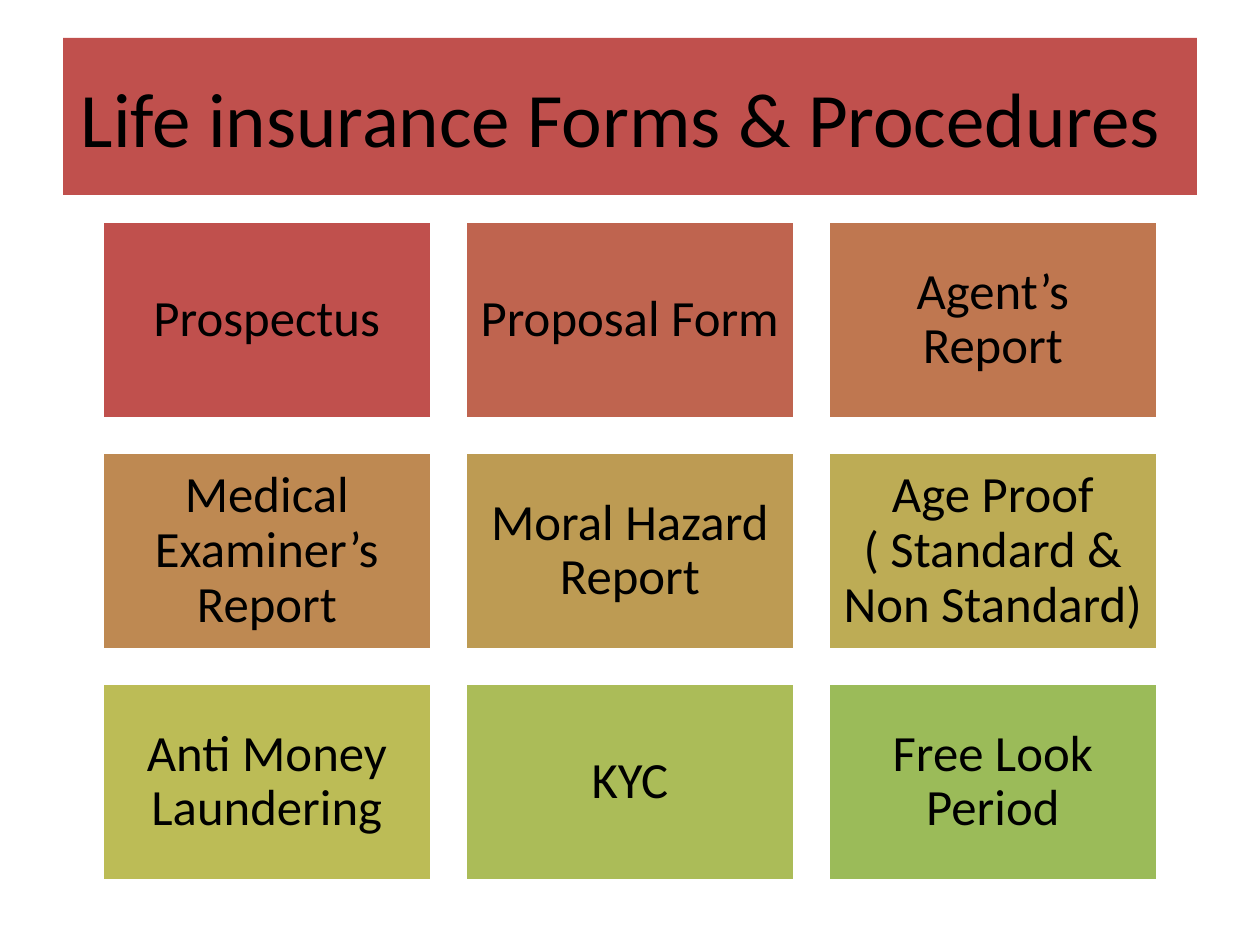
from dataclasses import dataclass

from pptx import Presentation
from pptx.dml.color import RGBColor
from pptx.enum.shapes import MSO_SHAPE
from pptx.enum.text import MSO_ANCHOR, PP_ALIGN
from pptx.util import Emu, Inches, Pt

RECT = MSO_SHAPE.RECTANGLE
MIDDLE = MSO_ANCHOR.MIDDLE
CENTER = PP_ALIGN.CENTER

BLACK = RGBColor(0x00, 0x00, 0x00)
WHITE = RGBColor(0xFF, 0xFF, 0xFF)
RED = RGBColor(0xC0, 0x50, 0x4D)
BRICK = RGBColor(0xBF, 0x64, 0x4F)
RUST = RGBColor(0xBF, 0x77, 0x50)
TAN = RGBColor(0xBE, 0x89, 0x52)
OCHRE = RGBColor(0xBD, 0x9B, 0x53)
SAND = RGBColor(0xBD, 0xAC, 0x55)
OLIVE = RGBColor(0xBC, 0xBC, 0x56)
LIME = RGBColor(0xAB, 0xBC, 0x58)
GREEN = RGBColor(0x9B, 0xBB, 0x59)

FONT = "Calibri"
COLS = 3
LEFT, TOP = 102, 221
WIDE, HIGH = 330, 198
STEP_X, STEP_Y = 363, 231
INSET = 15


@dataclass
class Tile:
    text: str
    fill: RGBColor


TILES = [
    Tile("Prospectus", RED),
    Tile("Proposal Form ", BRICK),
    Tile("Agent’s Report", RUST),
    Tile("Medical Examiner’s Report", TAN),
    Tile("Moral Hazard Report", OCHRE),
    Tile("Age Proof ( Standard & Non Standard)", SAND),
    Tile("Anti Money Laundering", OLIVE),
    Tile("KYC", LIME),
    Tile("Free Look Period", GREEN),
]


def px(count: int) -> Emu:
    """Turn px, at 126 to the inch, into EMU."""
    return Emu(round(count * 914400 / 126))


def paint(shape, fill: RGBColor) -> None:
    shape.fill.solid()
    shape.fill.fore_color.rgb = fill


def write(shape, text: str, *, size: int, lines: float = 1.0) -> None:
    frame = shape.text_frame
    frame.word_wrap = True
    frame.vertical_anchor = MIDDLE
    para = frame.paragraphs[0]
    para.alignment = CENTER
    para.line_spacing = lines
    run = para.add_run()
    run.text = text
    run.font.name = FONT
    run.font.size = Pt(size)
    run.font.color.rgb = BLACK


def draw_title(slide, text: str) -> None:
    title = slide.shapes.title
    title.left, title.top = px(63), px(38)
    title.width, title.height = px(1134), px(157)
    paint(title, RED)
    write(title, text, size=44)


def draw_tile(slide, tile: Tile, row: int, col: int) -> None:
    shape = slide.shapes.add_shape(
        RECT, px(LEFT + col * STEP_X), px(TOP + row * STEP_Y), px(WIDE), px(HIGH)
    )
    shape.shadow.inherit = False
    paint(shape, tile.fill)
    shape.line.color.rgb = WHITE
    shape.line.width = Pt(2)
    frame = shape.text_frame
    frame.margin_left = frame.margin_right = px(INSET)
    frame.margin_top = frame.margin_bottom = px(INSET)
    write(shape, tile.text, size=29, lines=0.9)


def main() -> None:
    deck = Presentation()
    deck.slide_width, deck.slide_height = Inches(10), Inches(7.5)
    slide = deck.slides.add_slide(deck.slide_layouts[5])
    draw_title(slide, "Life insurance Forms & Procedures ")
    for index, tile in enumerate(TILES):
        draw_tile(slide, tile, *divmod(index, COLS))
    deck.save("out.pptx")


if __name__ == "__main__":
    main()
